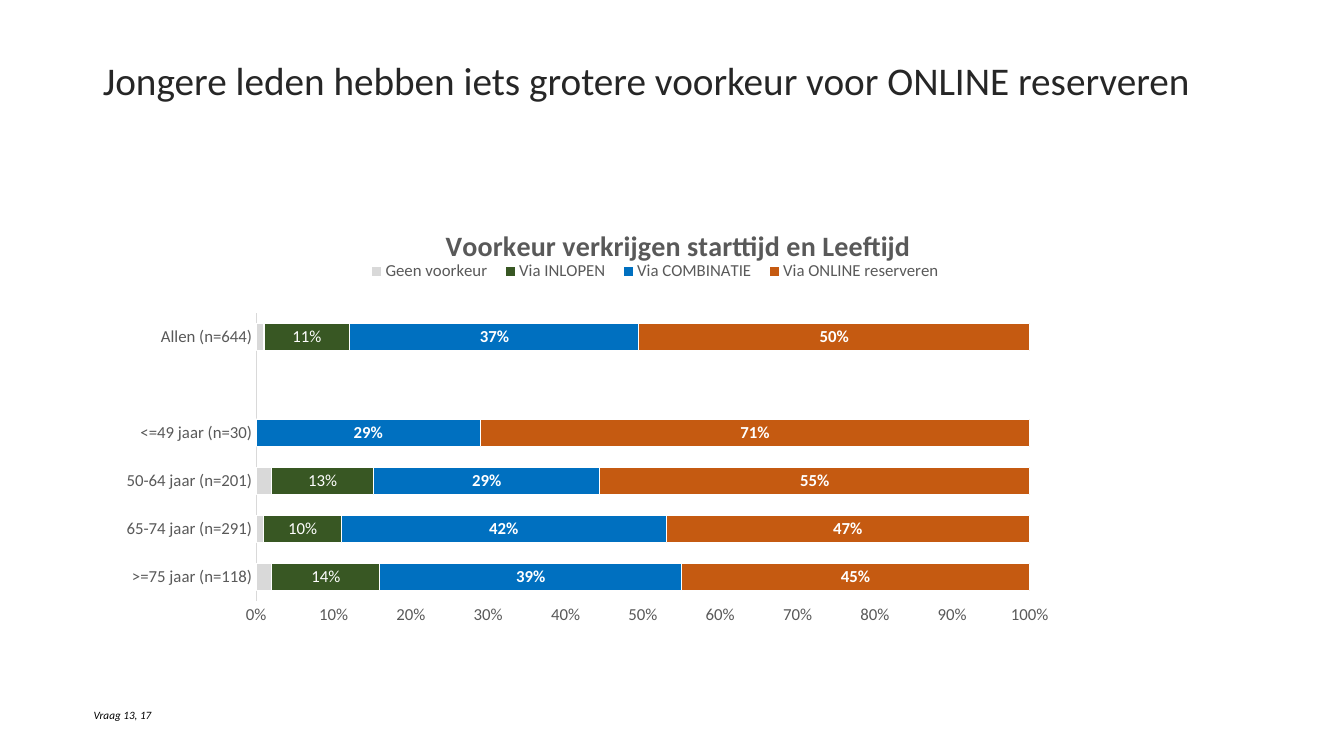
from dataclasses import dataclass

from lxml import etree
from pptx import Presentation
from pptx import oxml
from pptx import util as u
from pptx.chart import data as chart_data
from pptx.chart.chart import Chart
from pptx.chart.series import BarSeries
from pptx.dml.color import RGBColor
from pptx.enum import chart as kinds
from pptx.enum import text
from pptx.oxml import ns

FONT = "Calibri"
BLACK = RGBColor(0x00, 0x00, 0x00)
WHITE = RGBColor(0xFF, 0xFF, 0xFF)
INK = RGBColor(0x26, 0x26, 0x26)
GREY = RGBColor(0x59, 0x59, 0x59)
LIGHT_GREY = RGBColor(0xD9, 0xD9, 0xD9)
GREEN = RGBColor(0x38, 0x57, 0x23)
BLUE = RGBColor(0x00, 0x70, 0xC0)
ORANGE = RGBColor(0xC5, 0x5A, 0x11)


@dataclass(frozen=True)
class Preference:
    name: str
    values: tuple[float | None, ...]
    color: RGBColor
    labelled: bool = True
    bold: bool = False


AGE_GROUPS = (
    ">=75 jaar (n=118)", "65-74 jaar (n=291)", "50-64 jaar (n=201)",
    "<=49 jaar (n=30)", "", "Allen (n=644)",
)
PREFERENCES = (
    Preference("Geen voorkeur", (0.02, 0.01, 0.02, 0, None, 0.01), LIGHT_GREY, labelled=False),
    Preference("Via INLOPEN", (0.14, 0.10, 0.13, 0, None, 0.11), GREEN),
    Preference("Via COMBINATIE", (0.39, 0.42, 0.29, 0.29, None, 0.37), BLUE, bold=True),
    Preference("Via ONLINE reserveren", (0.45, 0.47, 0.55, 0.71, None, 0.50), ORANGE, bold=True),
)


def style_font(font, size: float, color: RGBColor, bold: bool = False, italic: bool = False) -> None:
    font.name = FONT
    font.size = u.Pt(size)
    font.bold = bold
    font.italic = italic
    font.color.rgb = color


def place_part(chart: Chart, part: str, **fractions: float) -> None:
    owner = chart._chartSpace.xpath(f".//c:{part}")[0]
    for old in owner.findall(ns.qn("c:layout")):
        owner.remove(old)
    layout = oxml.parse_xml(f"<c:layout {ns.nsdecls('c')}><c:manualLayout/></c:layout>")
    settings = {"layoutTarget": "inner"} if part == "plotArea" else {}
    settings |= {"xMode": "edge", "yMode": "edge"} | fractions
    for tag, value in settings.items():
        etree.SubElement(layout[0], ns.qn(f"c:{tag}"), val=str(value))
    overlay = owner.find(ns.qn("c:overlay"))
    if overlay is None:
        owner.insert(0, layout)
    else:
        overlay.addprevious(layout)


def style_series(series: BarSeries, preference: Preference) -> None:
    series.format.fill.solid()
    series.format.fill.fore_color.rgb = preference.color
    series.format.line.color.rgb = WHITE
    series.format.line.width = u.Pt(0.75)
    if not preference.labelled:
        return
    labels = series.data_labels
    labels.show_value = True
    labels.number_format = "0%"
    labels.number_format_is_linked = False
    labels.position = kinds.XL_LABEL_POSITION.CENTER
    style_font(labels.font, 12, WHITE, bold=preference.bold)
    empty = [index for index, value in enumerate(preference.values) if value == 0]
    for place, index in enumerate(empty):
        hidden = oxml.parse_xml(
            f'<c:dLbl {ns.nsdecls("c")}><c:idx val="{index}"/><c:delete val="1"/></c:dLbl>'
        )
        labels._element.insert(place, hidden)


def style_axes(chart: Chart) -> None:
    for axis in (chart.category_axis, chart.value_axis):
        axis.has_major_gridlines = False
        axis.major_tick_mark = kinds.XL_TICK_MARK.NONE
        axis.minor_tick_mark = kinds.XL_TICK_MARK.NONE
        style_font(axis.tick_labels.font, 12, GREY)
    chart.category_axis.format.line.color.rgb = LIGHT_GREY
    chart.category_axis.format.line.width = u.Pt(0.75)
    shares = chart.value_axis
    shares.format.line.fill.background()
    shares.minimum_scale, shares.maximum_scale, shares.major_unit = 0, 1, 0.1
    shares.tick_labels.number_format = "0%"
    shares.tick_labels.number_format_is_linked = False


def add_preference_chart(page) -> None:
    table = chart_data.CategoryChartData(number_format="0%")
    table.categories = AGE_GROUPS
    for preference in PREFERENCES:
        table.add_series(preference.name, preference.values)
    frame = page.shapes.add_chart(
        kinds.XL_CHART_TYPE.BAR_STACKED_100,
        u.Inches(0.92), u.Inches(2), u.Inches(11.5), u.Inches(4.76), table,
    )
    chart = frame.chart
    style_font(chart.font, 10, BLACK)

    chart.has_title = True
    heading = chart.chart_title.text_frame.paragraphs[0]
    heading.text = "Voorkeur verkrijgen starttijd en Leeftijd"
    style_font(heading.font, 20, GREY, bold=True)
    chart.has_legend = True
    chart.legend.position = kinds.XL_LEGEND_POSITION.TOP
    chart.legend.include_in_layout = False
    style_font(chart.legend.font, 12, GREY)
    place_part(chart, "title", x=0.3, y=0.04)
    place_part(chart, "legend", x=0.23, y=0.11, w=0.51, h=0.07)
    place_part(chart, "plotArea", x=0.141, y=0.232, w=0.667, h=0.601)

    plot = chart.plots[0]
    plot.gap_width = 75
    plot.overlap = 100
    plot.vary_by_categories = False
    for series, preference in zip(plot.series, PREFERENCES):
        style_series(series, preference)
    style_axes(chart)


def add_title(page) -> None:
    title = page.shapes.title
    title.left, title.top = u.Inches(0.92), u.Inches(0.56)
    title.width, title.height = u.Inches(11.5), u.Inches(0.53)
    title.text_frame.vertical_anchor = text.MSO_ANCHOR.MIDDLE
    para = title.text_frame.paragraphs[0]
    para.text = "Jongere leden hebben iets grotere voorkeur voor ONLINE reserveren"
    para.alignment = text.PP_ALIGN.LEFT
    para.line_spacing = 0.9
    style_font(para.font, 28, INK)


def add_question_note(page) -> None:
    box = page.shapes.add_textbox(u.Inches(0.83), u.Inches(6.98), u.Inches(0.78), u.Inches(0.24))
    box.text_frame.word_wrap = False
    para = box.text_frame.paragraphs[0]
    para.text = "Vraag 13, 17"
    style_font(para.font, 8, BLACK, italic=True)


def main() -> None:
    deck = Presentation()
    deck.slide_width, deck.slide_height = u.Inches(13.33), u.Inches(7.5)
    page = deck.slides.add_slide(deck.slide_layouts[5])
    add_title(page)
    add_preference_chart(page)
    add_question_note(page)
    deck.save("out.pptx")


if __name__ == "__main__":
    main()
